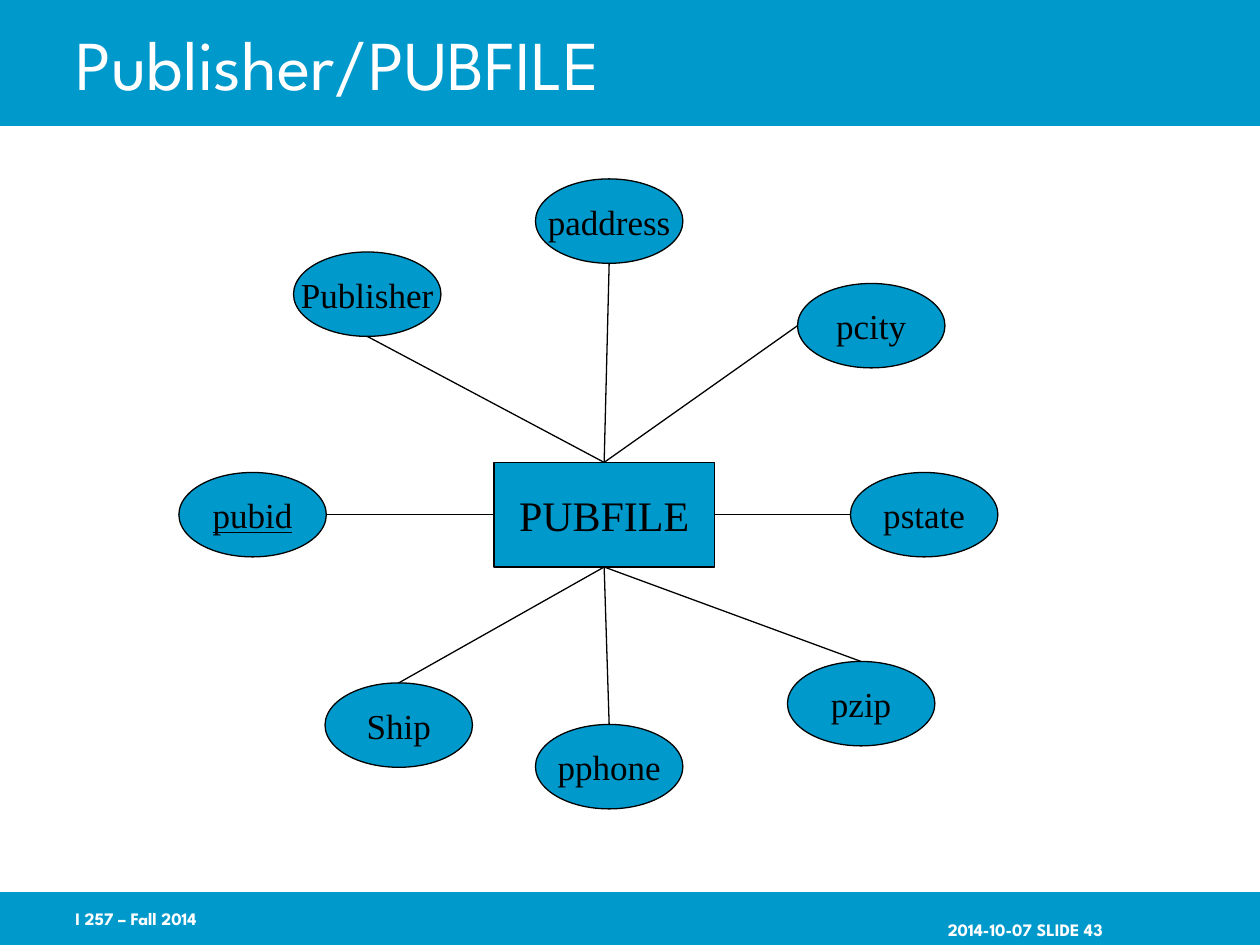
from lxml import etree
from pptx import Presentation
from pptx.dml.color import RGBColor
from pptx.enum.shapes import MSO_CONNECTOR, MSO_SHAPE
from pptx.enum.text import MSO_ANCHOR as ANCHOR, PP_ALIGN as ALIGN
from pptx.oxml.ns import qn
from pptx.util import Inches, Pt

COLORS = {"blue": "0099CC", "white": "FFFFFF", "black": "000000"}
HEAD_FONT, BODY_FONT = "League Spartan", "Times New Roman"

TITLE = "Publisher/PUBFILE"
BANDS = [(0, 0, 10, 1), (0, 7.08, 10, 0.42)]
# text, left, alignment, insets (left, top, right, bottom)
FOOTERS = [
    ("2014-10-07 SLIDE 43", 7.42, ALIGN.RIGHT, (0, 0.22, 0.75, 0.05)),
    ("I 257 – Fall 2014", 0.5, ALIGN.LEFT, (0.1, 0.05, 0, 0.05)),
]
ENTITY = ("PUBFILE", (3.92, 3.67, 1.75, 0.83))
OVAL_SIZE = (1.17, 0.67)
# name, left, top, side of the oval, side of the entity
ATTRIBUTES = [
    ("pubid", 1.42, 3.75, "right", "left"),
    ("Ship", 2.58, 5.42, "top", "bottom"),
    ("Publisher", 2.33, 2, "bottom", "top"),
    ("pphone", 4.25, 5.75, "top", "bottom"),
    ("pzip", 6.25, 5.25, "top", "bottom"),
    ("pstate", 6.75, 3.75, "left", "right"),
    ("pcity", 6.33, 2.25, "left", "top"),
    ("paddress", 4.25, 1.42, "bottom", "top"),
]
KEY = "pubid"
SIDES = {"top": (0.5, 0), "bottom": (0.5, 1), "left": (0, 0.5), "right": (1, 0.5)}


def rgb(name):
    return RGBColor.from_string(COLORS[name])


def add_run(p, text, size, font, color, bold=False, underline=False):
    r = p.add_run()
    r.text = text
    r.font.size, r.font.name = Pt(size), font
    r.font.bold, r.font.underline = bold, underline
    r.font.color.rgb = rgb(color)


def add_filled(shapes, kind, box):
    sp = shapes.add_shape(kind, *map(Inches, box))
    sp.shadow.inherit = False
    sp.fill.solid()
    sp.fill.fore_color.rgb = rgb("blue")
    sp.line.fill.background()
    return sp


def add_node(shapes, kind, box, text, size):
    sp = add_filled(shapes, kind, box)
    sp.line.color.rgb = rgb("black")
    sp.line.width = Pt(0.75)
    tf = sp.text_frame
    tf.word_wrap = False
    tf.vertical_anchor = ANCHOR.MIDDLE
    p = tf.paragraphs[0]
    p.alignment = ALIGN.CENTER
    add_run(p, text, size, BODY_FONT, "black", underline=text == KEY)


def side_point(box, side):
    left, top, width, height = box
    fx, fy = SIDES[side]
    return Inches(left + fx * width), Inches(top + fy * height)


def add_link(shapes, start, end):
    line = shapes.add_connector(MSO_CONNECTOR.STRAIGHT, *start, *end)
    line.line.color.rgb = rgb("black")
    line.line.width = Pt(0.75)
    etree.SubElement(line._element.spPr, qn("a:effectLst"))


def add_footer(s, text, left, align, insets):
    tf = s.shapes.add_textbox(*map(Inches, (left, 7.08, 2.08, 0.42))).text_frame
    tf.word_wrap = True
    tf.vertical_anchor = ANCHOR.MIDDLE
    (tf.margin_left, tf.margin_top,
     tf.margin_right, tf.margin_bottom) = map(Inches, insets)
    p = tf.paragraphs[0]
    p.alignment = align
    add_run(p, text, 10, HEAD_FONT, "white", bold=True)


def add_title(s):
    title = s.shapes.title
    title.left, title.top, title.width, title.height = map(Inches, (0.5, 0, 8.5, 1))
    title.text_frame.vertical_anchor = ANCHOR.MIDDLE
    p = title.text_frame.paragraphs[0]
    p.alignment = ALIGN.LEFT
    add_run(p, TITLE, 40, HEAD_FONT, "white")
    # Bring the title in front of the band
    s.shapes._spTree.append(title._element)


def add_diagram(s):
    shapes = s.shapes.add_group_shape().shapes
    name, entity_box = ENTITY
    add_node(shapes, MSO_SHAPE.RECTANGLE, entity_box, name, 24)
    for name, left, top, *_ in ATTRIBUTES:
        add_node(shapes, MSO_SHAPE.OVAL, (left, top, *OVAL_SIZE), name, 20)
    for _, left, top, oval_side, entity_side in ATTRIBUTES:
        add_link(shapes, side_point((left, top, *OVAL_SIZE), oval_side),
                 side_point(entity_box, entity_side))


def main():
    prs = Presentation()
    prs.slide_width, prs.slide_height = Inches(10), Inches(7.5)
    s = prs.slides.add_slide(prs.slide_layouts[5])
    for box in BANDS:
        add_filled(s.shapes, MSO_SHAPE.RECTANGLE, box)
    for footer in FOOTERS:
        add_footer(s, *footer)
    add_title(s)
    add_diagram(s)
    prs.save("out.pptx")


if __name__ == "__main__":
    main()
